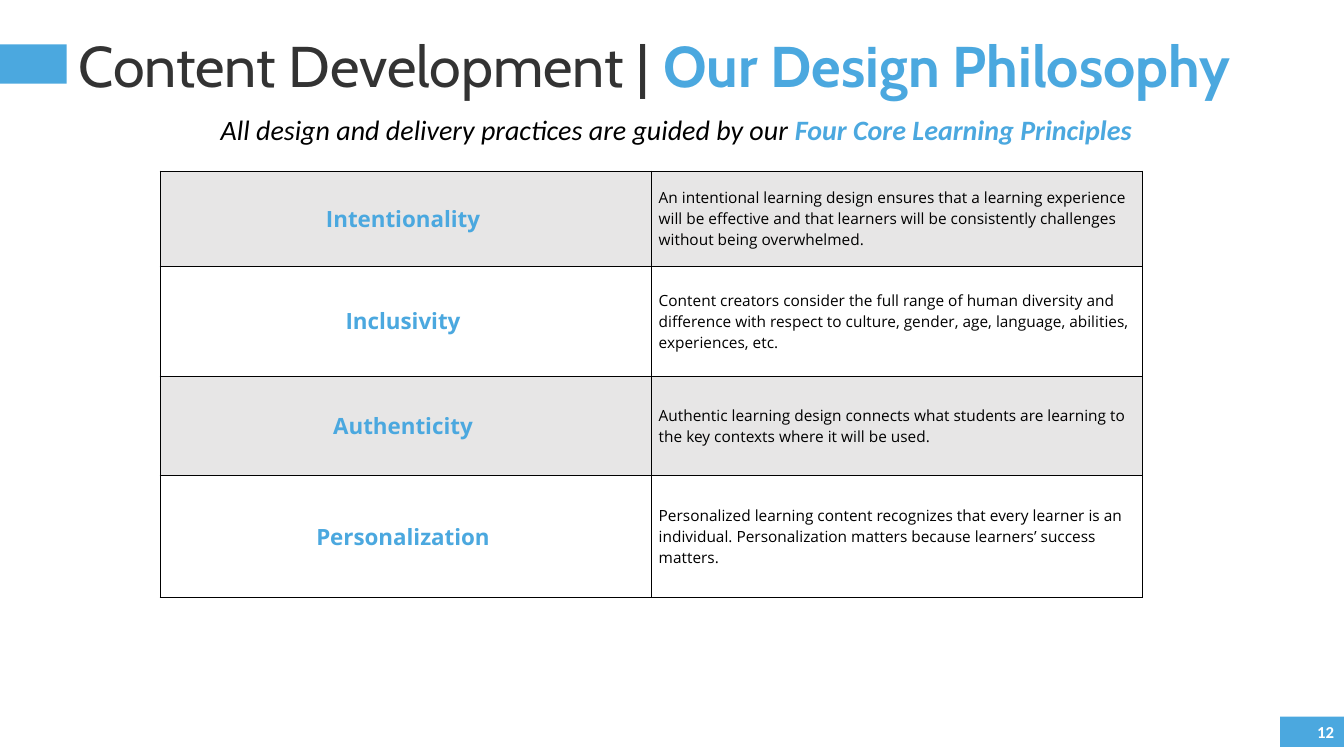
from dataclasses import dataclass

import lxml.etree
import pptx
import pptx.dml.color
import pptx.enum.shapes
import pptx.enum.text
import pptx.oxml.ns
import pptx.util

Cm = pptx.util.Cm
Pt = pptx.util.Pt
ALIGN = pptx.enum.text.PP_ALIGN
MIDDLE = pptx.enum.text.MSO_ANCHOR.MIDDLE

PRINCIPLES = [
    ("Intentionality ", "An intentional learning design ensures that a learning experience will be "
     "effective and that learners will be consistently challenges without being overwhelmed.", 2.39),
    ("Inclusivity ", "Content creators consider the full range of human diversity and difference with "
     "respect to culture, gender, age, language, abilities, experiences, etc.", 2.77),
    ("Authenticity ", "Authentic learning design connects what students are learning to the key "
     "contexts where it will be used.", 2.51),
    ("Personalization ", "Personalized learning content recognizes that every learner is an individual. "
     "Personalization matters because learners’ success matters.", 3.07),
]


@dataclass(frozen=True)
class Theme:
    """Colours, fonts, type sizes and line widths of the slide."""
    accent: str = "4BA8DF"
    heading: str = "333333"
    ink: str = "000000"
    paper: str = "FFFFFF"
    band: str = "E7E6E6"
    heading_font: str = "Cabin"
    note_font: str = "Calibri"
    table_font: str = "Open Sans"
    title_size: int = 41
    subtitle_size: int = 20
    label_size: int = 16
    body_size: int = 11
    number_size: int = 12
    thin: float = 0.6
    thick: float = 1.2


def rgb(value):
    """Turn a hex string into a colour."""
    return pptx.dml.color.RGBColor.from_string(value)


def add_text(paragraph, text, *, font, size, color, bold=False, italic=False):
    """Append one formatted run to a paragraph."""
    run = paragraph.add_run()
    run.text = text
    run.font.name = font
    run.font.size = Pt(size)
    run.font.color.rgb = rgb(color)
    run.font.bold = bold
    run.font.italic = italic


def set_margins(target, left, top, right, bottom):
    """Set the inner margins of a text frame or table cell in centimetres."""
    target.margin_left, target.margin_right = Cm(left), Cm(right)
    target.margin_top, target.margin_bottom = Cm(top), Cm(bottom)


class SlideBuilder:
    """Draws styled elements on the current slide."""

    def __init__(self, slide, theme):
        """Keep the slide and its theme."""
        self.slide = slide
        self.theme = theme

    def block(self, left, top, width, height):
        """Add a plain accent rectangle."""
        shape = self.slide.shapes.add_shape(
            pptx.enum.shapes.MSO_SHAPE.RECTANGLE, Cm(left), Cm(top), Cm(width), Cm(height))
        shape.shadow.inherit = False
        shape.fill.solid()
        shape.fill.fore_color.rgb = rgb(self.theme.accent)
        shape.line.fill.background()
        return shape

    def text_box(self, left, top, width, height):
        """Add a wrapping text box and return its frame."""
        shape = self.slide.shapes.add_textbox(Cm(left), Cm(top), Cm(width), Cm(height))
        shape.text_frame.word_wrap = True
        return shape.text_frame

    def page_number(self, number):
        """Add the page number badge in the lower right corner."""
        frame = self.block(32.26, 18.06, 1.61, 0.76).text_frame
        frame.vertical_anchor = MIDDLE
        paragraph = frame.paragraphs[0]
        paragraph.alignment = ALIGN.RIGHT
        add_text(paragraph, number, font=self.theme.note_font, size=self.theme.number_size,
                 color=self.theme.paper, bold=True)

    def title(self, topic, emphasis):
        """Add the two-tone title."""
        theme = self.theme
        frame = self.text_box(1.68, 0.74, 32.77, 1.75)
        set_margins(frame, 0.3, 0, 0, 0)
        frame.vertical_anchor = MIDDLE
        paragraph = frame.paragraphs[0]
        style = dict(font=theme.heading_font, size=theme.title_size)
        add_text(paragraph, topic, color=theme.heading, **style)
        add_text(paragraph, emphasis, color=theme.accent, bold=True, **style)

    def subtitle(self, lead, emphasis):
        """Add the centred italic subtitle."""
        theme = self.theme
        paragraph = self.text_box(1.68, 2.64, 30.89, 3.89).paragraphs[0]
        paragraph.alignment = ALIGN.CENTER
        paragraph.line_spacing = 1.07
        paragraph.space_after = Pt(8)
        style = dict(font=theme.note_font, size=theme.subtitle_size, italic=True)
        add_text(paragraph, lead, color=theme.ink, **style)
        add_text(paragraph, emphasis, color=theme.accent, bold=True, **style)

    def borders(self, cell, **widths):
        """Draw the cell borders, given as widths in points by side letter."""
        properties = cell._tc.get_or_add_tcPr()
        qn = pptx.oxml.ns.qn
        for side, width in widths.items():
            line = lxml.etree.SubElement(properties, qn(f"a:ln{side}"), w=str(Pt(width)))
            fill = lxml.etree.SubElement(line, qn("a:solidFill"))
            lxml.etree.SubElement(fill, qn("a:srgbClr"), val=self.theme.ink)

    def principles_table(self, principles):
        """Add the table of principles with alternating row fills."""
        theme = self.theme
        total = sum(height for _, _, height in principles)
        table = self.slide.shapes.add_table(
            len(principles), 2, Cm(4.04), Cm(4.32), Cm(24.76), Cm(total)).table
        table.first_row = table.horz_banding = False
        label_style = dict(size=theme.label_size, color=theme.accent, bold=True)
        body_style = dict(size=theme.body_size, color=theme.ink)
        columns = [(ALIGN.CENTER, label_style), (ALIGN.LEFT, body_style)]
        last = len(principles) - 1
        for row, (label, body, height) in enumerate(principles):
            table.rows[row].height = Cm(height)
            for column, text in enumerate((label, body)):
                cell = table.cell(row, column)
                alignment, style = columns[column]
                set_margins(cell, 0.18, 0.1, 0.18, 0.1)
                cell.vertical_anchor = MIDDLE
                self.borders(cell, L=theme.thin if column else theme.thick, R=theme.thin,
                             T=theme.thin if row else theme.thick,
                             B=theme.thick if row == last else theme.thin)
                cell.fill.solid()
                cell.fill.fore_color.rgb = rgb(theme.paper if row % 2 else theme.band)
                paragraph = cell.text_frame.paragraphs[0]
                paragraph.alignment = alignment
                add_text(paragraph, text, font=theme.table_font, **style)


def main():
    """Build and save the slide."""
    presentation = pptx.Presentation()
    presentation.slide_width, presentation.slide_height = Cm(33.87), Cm(19.05)
    slide = presentation.slides.add_slide(presentation.slide_layouts[6])
    builder = SlideBuilder(slide, Theme())
    builder.page_number("12")
    builder.block(0, 1.12, 1.68, 0.99)
    builder.title("Content Development | ", "Our Design Philosophy")
    builder.subtitle("All design and delivery practices are guided by our ",
                     "Four Core Learning Principles ")
    builder.principles_table(PRINCIPLES)
    presentation.save("out.pptx")


if __name__ == "__main__":
    main()
